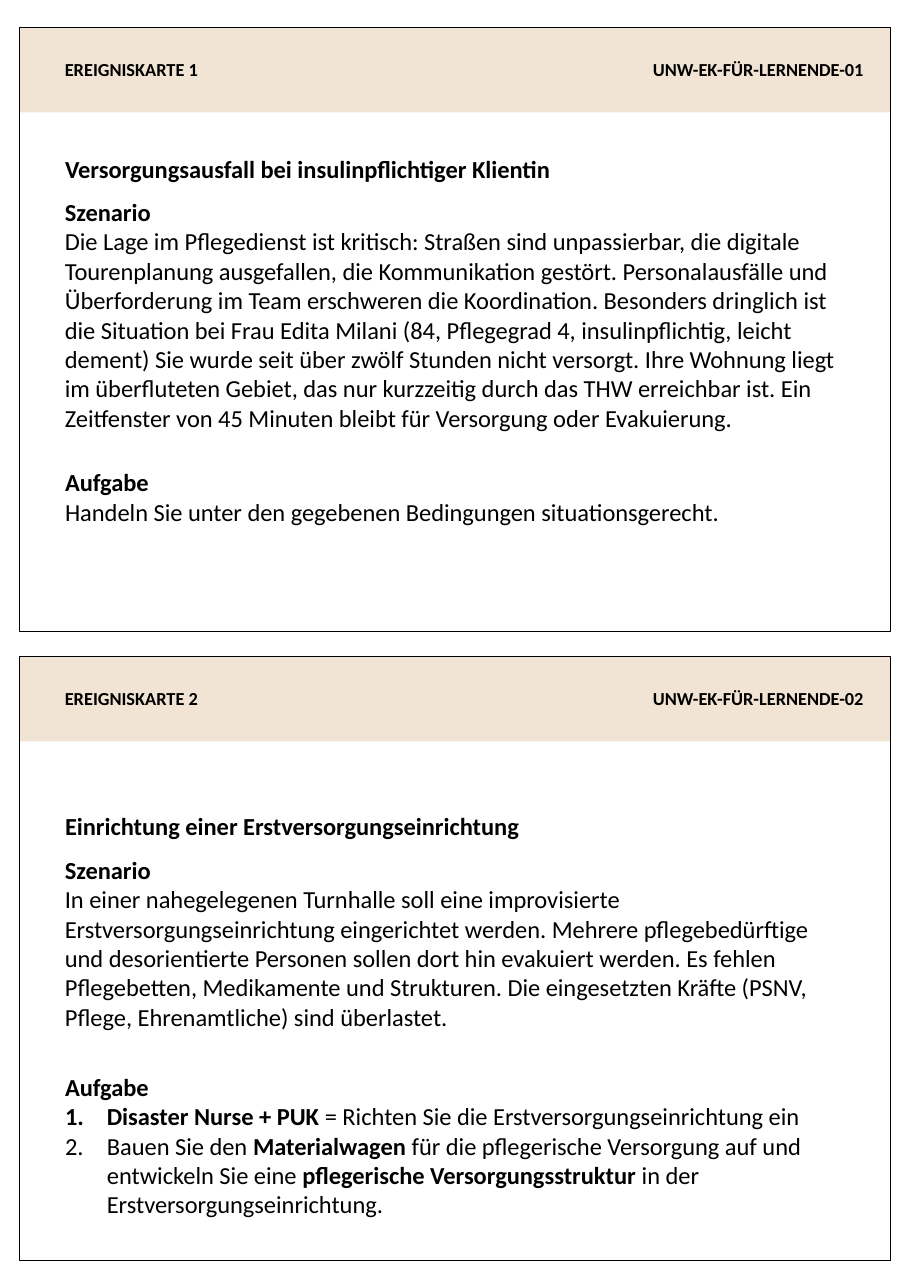
from dataclasses import dataclass

from lxml import etree
from pptx import Presentation
from pptx.dml.color import RGBColor
from pptx.enum.shapes import MSO_SHAPE
from pptx.enum.text import MSO_ANCHOR, MSO_AUTO_SIZE, PP_ALIGN
from pptx.oxml.ns import qn
from pptx.util import Pt

RECTANGLE = MSO_SHAPE.RECTANGLE
LEFT, RIGHT = PP_ALIGN.LEFT, PP_ALIGN.RIGHT
TOP = MSO_ANCHOR.TOP
NO_AUTO_SIZE = MSO_AUTO_SIZE.NONE
COMPARISON_LAYOUT = 4
PX = 9144
SLIDE_WIDTH, SLIDE_HEIGHT = 826, 1169
CARD_LEFT, CARD_TOP, CARD_WIDTH, CARD_HEIGHT, CARD_PITCH = 18, 25, 790, 548, 571
BAND_HEIGHT, TEXT_INSET, LIST_INDENT = 77, 31, 38


@dataclass(frozen=True)
class Theme:
    font: str = "Calibri"
    text: RGBColor = RGBColor(0, 0, 0)
    band: RGBColor = RGBColor(0xF2, 0xE4, 0xD4)
    label_size: int = 12
    body_size: int = 16
    line_width: float = 0.75


THEME = Theme()

CARDS = [
    {
        "label": "EREIGNISKARTE 1",
        "code": "UNW-EK-FÜR-LERNENDE-01",
        "heading": "Versorgungsausfall bei insulinpflichtiger Klientin",
        "scenario": (
            "Die Lage im Pflegedienst ist kritisch: Straßen sind unpassierbar, die digitale "
            "Tourenplanung ausgefallen, die Kommunikation gestört. Personalausfälle und "
            "Überforderung im Team erschweren die Koordination. Besonders dringlich ist die "
            "Situation bei Frau Edita Milani (84, Pflegegrad 4, insulinpflichtig, leicht dement) "
            "Sie wurde seit über zwölf Stunden nicht versorgt. Ihre Wohnung liegt im überfluteten "
            "Gebiet, das nur kurzzeitig durch das THW erreichbar ist. Ein Zeitfenster von 45 "
            "Minuten bleibt für Versorgung oder Evakuierung."
        ),
        "tasks": [[("Handeln Sie unter den gegebenen Bedingungen situationsgerecht.", False)]],
        "numbered": False,
        "heading_slot": 0,
        "task_slot": 2,
        "heading_box": (110, 37),
        "scenario_box": (149, 226),
        "task_box": (394, 91),
    },
    {
        "label": "EREIGNISKARTE 2",
        "code": "UNW-EK-FÜR-LERNENDE-02",
        "heading": "Einrichtung einer Erstversorgungseinrichtung",
        "scenario": (
            "In einer nahegelegenen Turnhalle soll eine improvisierte Erstversorgungseinrichtung "
            "eingerichtet werden. Mehrere pflegebedürftige und desorientierte Personen sollen dort "
            "hin evakuiert werden. Es fehlen Pflegebetten, Medikamente und Strukturen. Die "
            "eingesetzten Kräfte (PSNV, Pflege, Ehrenamtliche) sind überlastet."
        ),
        "tasks": [
            [
                ("Disaster Nurse + PUK ", True),
                ("= Richten Sie die Erstversorgungseinrichtung ein", False),
            ],
            [
                ("Bauen Sie den ", False),
                ("Materialwagen", True),
                (" für die pflegerische Versorgung auf und entwickeln Sie eine ", False),
                ("pflegerische Versorgungsstruktur", True),
                (" in der Erstversorgungseinrichtung.", False),
            ],
        ],
        "numbered": True,
        "heading_slot": 3,
        "task_slot": 4,
        "heading_box": (135, 37),
        "scenario_box": (175, 172),
        "task_box": (372, 199),
    },
]


def set_attributes(target, values):
    for name, value in values.items():
        setattr(target, name, value)


def place(shape, left, top, width, height):
    values = {"left": left, "top": top, "width": width, "height": height}
    set_attributes(shape, {name: length * PX for name, length in values.items()})


def set_bullet(paragraph, numbered):
    properties = paragraph._p.get_or_add_pPr()
    indent = LIST_INDENT * PX if numbered else 0
    properties.set("marL", str(indent))
    properties.set("indent", str(-indent))
    if numbered:
        etree.SubElement(properties, qn("a:buFont")).set("typeface", THEME.font)
        etree.SubElement(properties, qn("a:buAutoNum")).set("type", "arabicPeriod")
    else:
        etree.SubElement(properties, qn("a:buNone"))


def write(shape, paragraphs, size=THEME.body_size, alignment=LEFT, numbered=False):
    frame = shape.text_frame
    set_attributes(frame, {
        "word_wrap": True, "auto_size": NO_AUTO_SIZE, "vertical_anchor": TOP,
    })
    for index, runs in enumerate(paragraphs):
        paragraph = frame.add_paragraph() if index else frame.paragraphs[0]
        set_attributes(paragraph, {"alignment": alignment, "space_before": Pt(0)})
        set_bullet(paragraph, numbered and index > 0)
        for text, bold in runs:
            run = paragraph.add_run()
            run.text = text
            set_attributes(run.font, {"name": THEME.font, "size": Pt(size), "bold": bold})
            run.font.color.rgb = THEME.text


def add_text(slide, box, paragraphs, **options):
    text_box = slide.shapes.add_textbox(*(length * PX for length in box))
    write(text_box, paragraphs, **options)


def add_rectangle(slide, box, fill=None, line=None):
    shape = slide.shapes.add_shape(RECTANGLE, *(length * PX for length in box))
    shape.shadow.inherit = False
    if fill is None:
        shape.fill.background()
    else:
        shape.fill.solid()
        shape.fill.fore_color.rgb = fill
    if line is None:
        shape.line.fill.background()
    else:
        shape.line.color.rgb = line
        shape.line.width = Pt(THEME.line_width)


def add_header(slide, box, card):
    left, top, width, height = box
    add_rectangle(slide, box, fill=THEME.band)
    add_text(slide, (left + TEXT_INSET, top + 23, 400, 30),
             [[(card["label"], True)]], size=THEME.label_size)
    add_text(slide, (left + width - 345, top + 23, 331, 30),
             [[(card["code"], True)]], size=THEME.label_size, alignment=RIGHT)


def add_card(slide, box, card):
    left, top, width, height = box
    text_left = left + TEXT_INSET
    add_header(slide, (left, top, width, BAND_HEIGHT), card)
    add_rectangle(slide, box, line=THEME.text)

    slots = {slot.placeholder_format.idx: slot for slot in slide.placeholders}
    heading = slots[card["heading_slot"]]
    offset, text_height = card["heading_box"]
    place(heading, text_left, top + offset, 695, text_height)
    write(heading, [[(card["heading"], True)]])

    offset, text_height = card["scenario_box"]
    add_text(slide, (text_left, top + offset, 725, text_height),
             [[("Szenario", True)], [(card["scenario"], False)]])

    task = slots[card["task_slot"]]
    offset, text_height = card["task_box"]
    place(task, text_left, top + offset, 695, text_height)
    write(task, [[("Aufgabe", True)], *card["tasks"]], numbered=card["numbered"])


def main():
    presentation = Presentation()
    set_attributes(presentation, {
        "slide_width": SLIDE_WIDTH * PX, "slide_height": SLIDE_HEIGHT * PX,
    })
    slide = presentation.slides.add_slide(presentation.slide_layouts[COMPARISON_LAYOUT])
    for index, card in enumerate(CARDS):
        top = CARD_TOP + index * CARD_PITCH
        add_card(slide, (CARD_LEFT, top, CARD_WIDTH, CARD_HEIGHT), card)
    for slot in list(slide.placeholders):
        if not slot.text_frame.text:
            slot.element.getparent().remove(slot.element)
    presentation.save("out.pptx")


if __name__ == "__main__":
    main()
